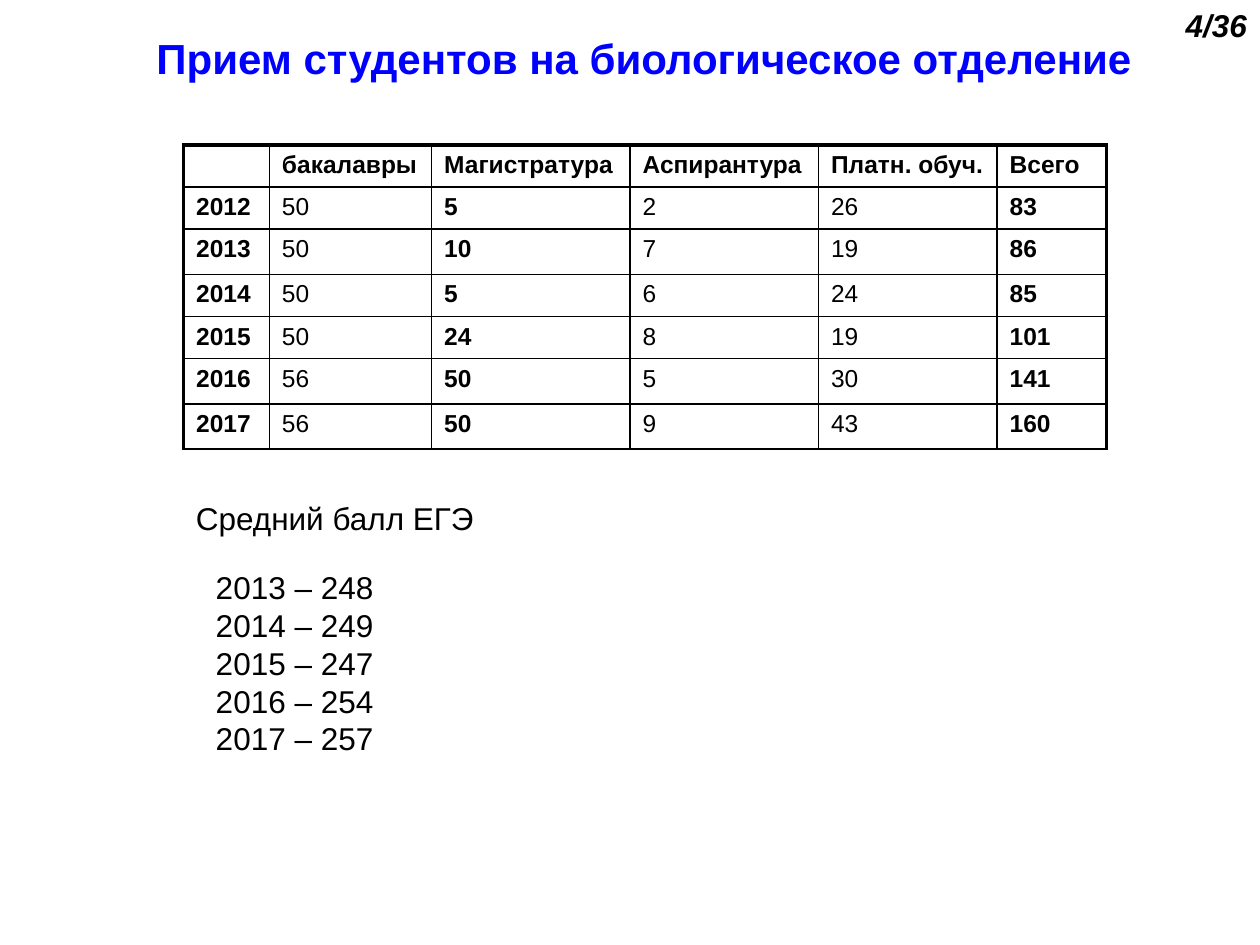
"""Build the slide on student admissions to the biology department."""
from lxml.etree import SubElement
from pptx import Presentation
from pptx.dml.color import RGBColor
from pptx.enum.text import MSO_ANCHOR, MSO_AUTO_SIZE, PP_ALIGN
from pptx.oxml.ns import qn
from pptx.util import Cm, Pt

BLACK = RGBColor(0, 0, 0)
BLUE = RGBColor(0, 0, 255)
FONT = "Arial"
THIN, THICK = Pt(1), Pt(2.25)

TITLE = "Прием студентов на биологическое отделение"
TITLE_BOX = (2.9, 0.53, 20.3, 1.27)
ADMISSIONS = [
    ("", "бакалавры", "Магистратура", "Аспирантура", "Платн. обуч.", "Всего"),
    ("2012", "50", "5", "2", "26", "83"),
    ("2013", "50", "10", "7", "19", "86"),
    ("2014", "50", "5", "6", "24", "85"),
    ("2015", "50", "24", "8", "19", "101"),
    ("2016", "56", "50", "5", "30", "141"),
    ("2017", "56", "50", "9", "43", "160"),
]
TABLE_LEFT, TABLE_TOP = 3.7, 2.92
COL_WIDTHS = [1.73, 3.27, 4.0, 3.8, 3.6, 2.2]
ROW_HEIGHTS = [0.85, 0.85, 0.91, 0.85, 0.85, 0.91, 0.91]
BOLD_COLS = {0, 2, 5}
SCORES = [("2013", 248), ("2014", 249), ("2015", 247), ("2016", 254), ("2017", 257)]
TEXTS = [
    (["4/36"], (23.65, 0, 1.75, 1.02), True),
    (["Средний балл ЕГЭ"], (3.7, 9.93, 6.35, 1.02), False),
    ([f"{year} – {score}" for year, score in SCORES], (4.1, 11.33, 4.06, 4.11), False),
]


def style(p, size, color=BLACK, bold=False, italic=False):
    f = p.font
    f.name, f.size, f.bold, f.italic = FONT, Pt(size), bold, italic
    f.color.rgb = color


def add_text(slide, lines, box, emphasis):
    tf = slide.shapes.add_textbox(*map(Cm, box)).text_frame
    tf.word_wrap = False
    tf.text = "\n".join(lines)
    for p in tf.paragraphs:
        style(p, 18, bold=emphasis, italic=emphasis)


def set_borders(cell, widths):
    tc_pr = cell._tc.get_or_add_tcPr()
    for i, (side, width) in enumerate(widths.items()):
        ln = tc_pr.makeelement(qn(f"a:ln{side}"), {"w": str(int(width))})
        tc_pr.insert(i, ln)
        fill = SubElement(ln, qn("a:solidFill"))
        SubElement(fill, qn("a:srgbClr"), val=str(BLACK))


def add_admissions(slide):
    n_rows, n_cols = len(ADMISSIONS), len(COL_WIDTHS)
    box = (TABLE_LEFT, TABLE_TOP, sum(COL_WIDTHS), sum(ROW_HEIGHTS))
    table = slide.shapes.add_table(n_rows, n_cols, *map(Cm, box)).table
    table.first_row = table.horz_banding = False
    for column, width in zip(table.columns, COL_WIDTHS):
        column.width = Cm(width)
    for r, (row, height) in enumerate(zip(ADMISSIONS, ROW_HEIGHTS)):
        table.rows[r].height = Cm(height)
        for c, text in enumerate(row):
            cell = table.cell(r, c)
            cell.text = text
            cell.fill.background()
            p = cell.text_frame.paragraphs[0]
            style(p, 14, bold=r == 0 or c in BOLD_COLS)
            if not text:
                p._p.get_or_add_endParaRPr().set("sz", "1400")
            set_borders(cell, {
                "L": THICK if c == 0 else THIN,
                "R": THICK if c == n_cols - 1 else THIN,
                "T": THICK if r == 0 else THIN,
                "B": THIN,
            })


def main():
    prs = Presentation()
    prs.slide_width, prs.slide_height = Cm(25.4), Cm(19.05)
    slide = prs.slides.add_slide(prs.slide_layouts[5])
    title = slide.shapes.title
    title.left, title.top, title.width, title.height = map(Cm, TITLE_BOX)
    tf = title.text_frame
    tf.text = TITLE
    tf.word_wrap = False
    tf.auto_size = MSO_AUTO_SIZE.NONE
    tf.vertical_anchor = MSO_ANCHOR.TOP
    p = tf.paragraphs[0]
    p.alignment = PP_ALIGN.LEFT
    style(p, 24, BLUE, bold=True)
    add_admissions(slide)
    for lines, box, emphasis in TEXTS:
        add_text(slide, lines, box, emphasis)
    prs.save("out.pptx")


if __name__ == "__main__":
    main()
